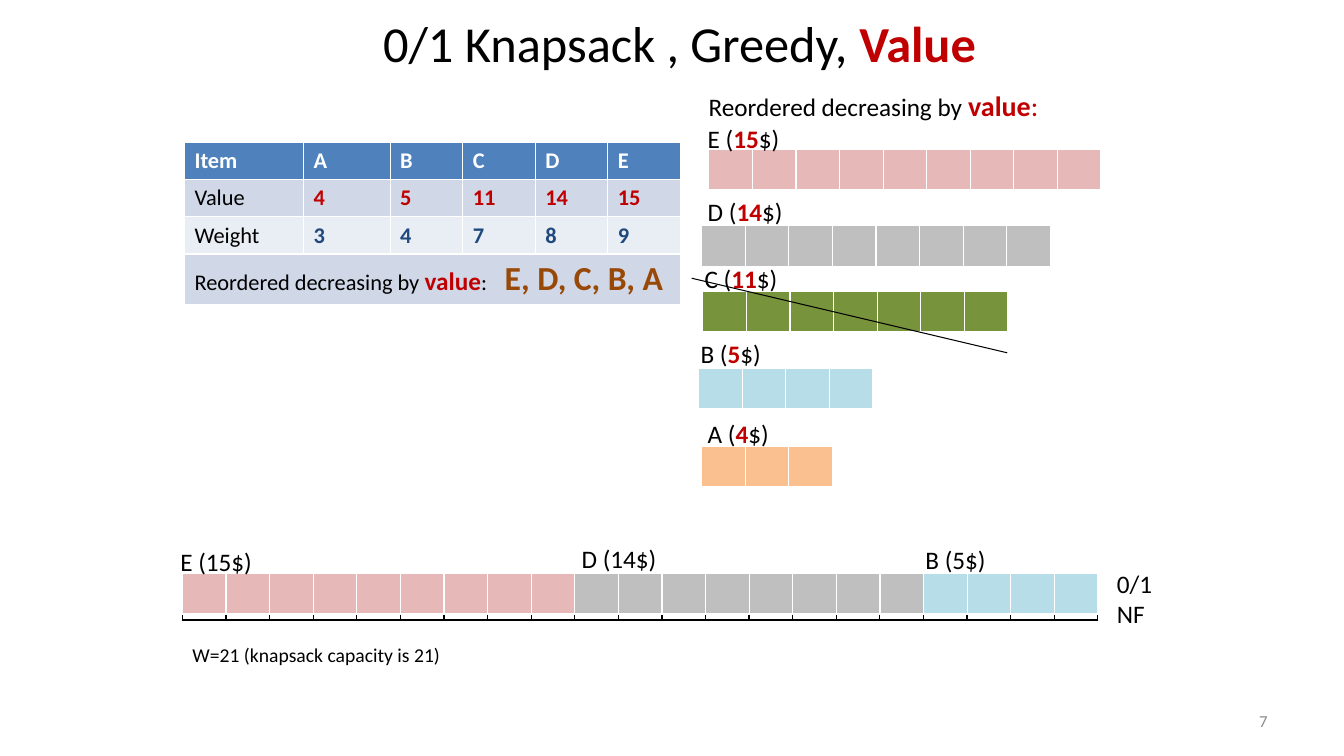
from pptx import Presentation
from pptx import util as u
from pptx.dml.color import RGBColor
from pptx.enum import shapes, text
from pptx.oxml import parse_xml
from pptx.oxml.ns import nsdecls

WIDTH, HEIGHT = 13.33, 7.5
BLACK, RED, WHITE, NAVY = "000000", "C00000", "FFFFFF", "1F497D"
FONT = "Calibri"
CAPACITY = 21
UNIT = 9.08 / CAPACITY
STRIP_HEIGHT = 0.4
RULER_LEFT, RULER_TOP, SACK_TOP = 1.81, 5.75, 5.69

# name: value, weight, colour
ITEMS = {
    "A": (4, 3, "FAC090"),
    "B": (5, 4, "B7DEE8"),
    "C": (11, 7, "77933C"),
    "D": (14, 8, "BFBFBF"),
    "E": (15, 9, "E6B9B8"),
}
# name, strip left, strip top, label left, label top, label width
ORDERED = [
    ("E", 7.03, 1.48, 6.92, 1.17, 0.92),
    ("D", 6.96, 2.24, 6.92, 1.9, 0.95),
    ("C", 6.97, 2.89, 6.89, 2.56, 0.93),
    ("B", 6.93, 3.65, 6.85, 3.31, 0.81),
    ("A", 6.96, 4.43, 6.92, 4.1, 0.82),
]
# name, label left, label top, label width
PACKED = [("E", 1.69, 5.37, 0.92), ("D", 5.67, 5.34, 0.95), ("B", 9.08, 5.35, 0.81)]

# text, size, colour, bold
TITLE = [("0/1 Knapsack , Greedy, ", 36, BLACK, False), ("Value", 36, RED, True)]
HEADING = [("Reordered decreasing by ", 18, BLACK, False), ("value", 20, RED, True),
           (":", 20, RED, False)]
SUMMARY = [("Reordered decreasing by ", 16, BLACK, False), ("value", 18, RED, True),
           (":  ", 16, BLACK, False), (" E, D, C, B, A", 24, "984807", True)]
TABLE_COLUMNS = [1.18, 0.86, 0.72, 0.72, 0.72, 0.72]
TABLE_ROWS = [0.37, 0.37, 0.37, 0.49]
# heading, entries, fill, heading colour, heading bold, entry colour
TABLE_LINES = [
    ("Item", list(ITEMS), "4F81BD", WHITE, True, WHITE),
    ("Value", [item[0] for item in ITEMS.values()], "D0D8E8", BLACK, False, RED),
    ("Weight", [item[1] for item in ITEMS.values()], "E9EDF4", BLACK, False, NAVY),
]


def rgb(value):
    """Turn a hex string into a colour."""
    return RGBColor.from_string(value)


def write(paragraph, runs):
    """Add formatted runs to a paragraph."""
    for words, size, colour, bold in runs:
        run = paragraph.add_run()
        run.text = words
        run.font.name, run.font.size, run.font.bold = FONT, u.Pt(size), bold
        run.font.color.rgb = rgb(colour)


def add_text(slide, box, *lines, wrap=False, align=None, middle=False):
    """Add a text box with one paragraph for each list of runs."""
    frame = slide.shapes.add_textbox(*map(u.Inches, box)).text_frame
    frame.word_wrap = wrap
    if middle:
        frame.vertical_anchor = text.MSO_ANCHOR.MIDDLE
    else:
        frame.auto_size = text.MSO_AUTO_SIZE.SHAPE_TO_FIT_TEXT
    for index, runs in enumerate(lines):
        paragraph = frame.add_paragraph() if index else frame.paragraphs[0]
        paragraph.alignment = align
        write(paragraph, runs)


def add_grid(slide, left, top, columns, rows):
    """Add a table with the given column widths and row heights."""
    box = map(u.Inches, (left, top, sum(columns), sum(rows)))
    table = slide.shapes.add_table(len(rows), len(columns), *box).table
    for column, width in zip(table.columns, columns):
        column.width = u.Inches(width)
    for row, height in zip(table.rows, rows):
        row.height = u.Inches(height)
    return table


def paint(cell, colour):
    """Fill a table cell."""
    cell.fill.solid()
    cell.fill.fore_color.rgb = rgb(colour)


def add_strip(slide, name, left, top):
    """Draw an item as one cell per unit of weight."""
    _, weight, colour = ITEMS[name]
    for cell in add_grid(slide, left, top, [UNIT] * weight, [STRIP_HEIGHT]).iter_cells():
        paint(cell, colour)


def add_label(slide, name, left, top, width, colour, bold):
    """Write an item's name and value."""
    runs = [(f"{name} (", 18, BLACK, False), (str(ITEMS[name][0]), 18, colour, bold),
            ("$)", 18, BLACK, False)]
    add_text(slide, (left, top, width, 0.4), runs)


def add_ruler(slide):
    """Draw the knapsack capacity as a row of outlined cells."""
    ruler = add_grid(slide, RULER_LEFT, RULER_TOP, [UNIT] * CAPACITY, [STRIP_HEIGHT])
    for cell in ruler.iter_cells():
        cell.fill.background()
        properties = cell._tc.get_or_add_tcPr()
        for index, side in enumerate(("lnL", "lnR", "lnT", "lnB")):
            properties.insert(index, parse_xml(
                f'<a:{side} {nsdecls("a")} w="12700"><a:solidFill>'
                f'<a:srgbClr val="{BLACK}"/></a:solidFill></a:{side}>'))


def add_item_table(slide):
    """Add the table of values and weights."""
    table = add_grid(slide, 1.83, 1.41, TABLE_COLUMNS, TABLE_ROWS)
    for row, (heading, entries, fill, colour, bold, entry_colour) in enumerate(TABLE_LINES):
        runs = [(heading, 16, colour, bold)]
        runs += [(str(entry), 16, entry_colour, True) for entry in entries]
        for column, run in enumerate(runs):
            cell = table.cell(row, column)
            paint(cell, fill)
            write(cell.text_frame.paragraphs[0], [run])
    last = len(TABLE_ROWS) - 1
    summary = table.cell(last, 0)
    summary.merge(table.cell(last, len(TABLE_COLUMNS) - 1))
    paint(summary, "D0D8E8")
    write(summary.text_frame.paragraphs[0], SUMMARY)


def add_strike(slide):
    """Cross out the item that does not fit."""
    ends = map(u.Inches, (6.86, 2.76, 9.99, 3.5))
    strike = slide.shapes.add_connector(shapes.MSO_CONNECTOR.STRAIGHT, *ends)
    strike.line.color.rgb = rgb(BLACK)
    strike.line.width = u.Pt(0.75)
    strike._element.spPr.append(parse_xml(f'<a:effectLst {nsdecls("a")}/>'))


def main():
    """Build the slide and save it."""
    presentation = Presentation()
    presentation.slide_width, presentation.slide_height = u.Inches(WIDTH), u.Inches(HEIGHT)
    slide = presentation.slides.add_slide(presentation.slide_layouts[6])

    add_text(slide, (2.24, 0.16, 9, 0.52), TITLE, wrap=True,
             align=text.PP_ALIGN.CENTER, middle=True)
    add_text(slide, (6.93, 0.83, 3.51, 0.44), HEADING)
    add_item_table(slide)
    add_ruler(slide)

    for name, left, top, label_left, label_top, width in ORDERED:
        add_strip(slide, name, left, top)
        add_label(slide, name, label_left, label_top, width, RED, True)
    add_strike(slide)

    used = 0
    for name, label_left, label_top, width in PACKED:
        add_strip(slide, name, RULER_LEFT + used * UNIT, SACK_TOP)
        add_label(slide, name, label_left, label_top, width, BLACK, False)
        used += ITEMS[name][1]

    add_text(slide, (10.98, 5.59, 0.59, 0.71), [("0/1", 18, BLACK, False)],
             [("NF", 18, BLACK, False)], wrap=True)
    add_text(slide, (1.81, 6.33, 2.68, 0.34),
             [(f"W={CAPACITY} (knapsack capacity is {CAPACITY})", 14, BLACK, False)])
    add_text(slide, (9.56, 6.95, 3.11, 0.4), [("7", 12, "8C8C8C", False)], wrap=True,
             align=text.PP_ALIGN.RIGHT, middle=True)
    presentation.save("out.pptx")


if __name__ == "__main__":
    main()
